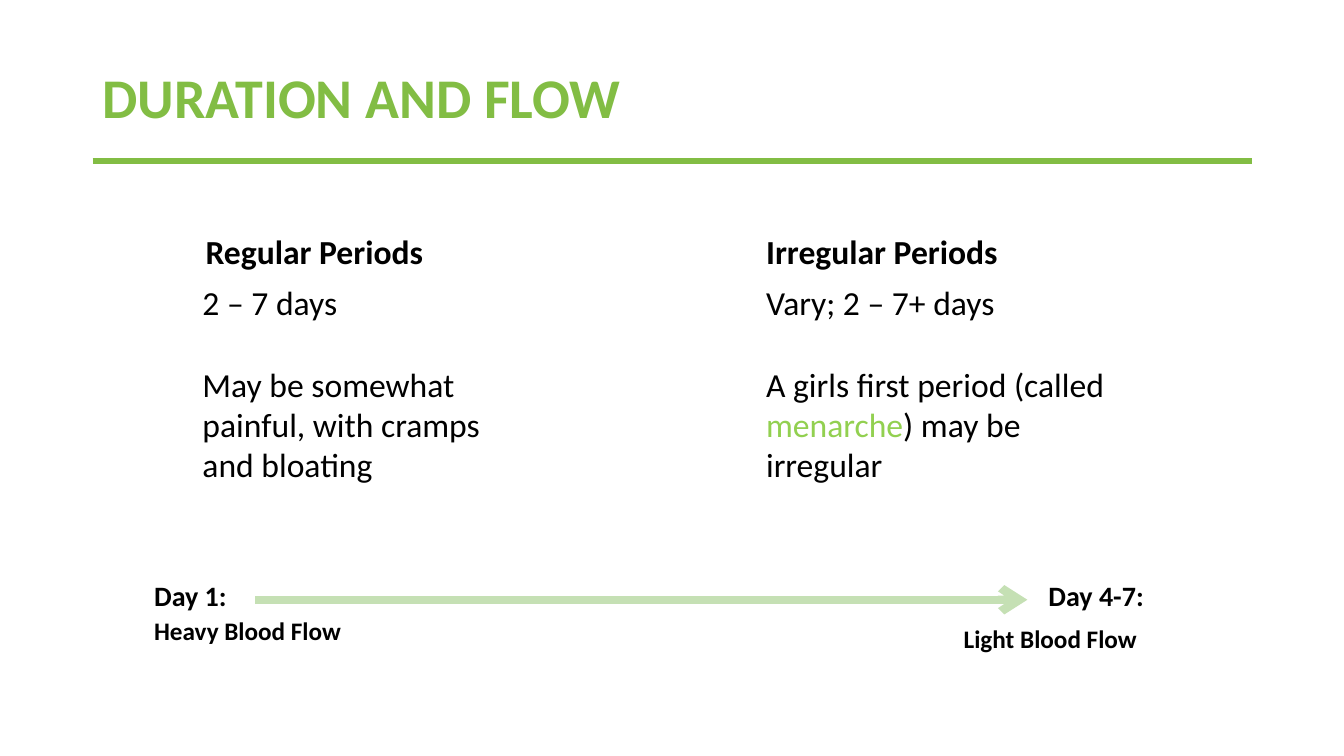
"""Build the slide comparing the duration and flow of periods."""
from lxml import etree
from pptx import Presentation
from pptx import util as u
from pptx.dml import color
from pptx.enum import shapes, text
from pptx.oxml import ns

COLORS = {"title": "82BD44", "accent": "92D050", "arrow": "C5E0B4", "body": "000000"}
FONTS = {
    "title": {"name": "Calibri", "size": u.Pt(40), "bold": True},
    "heading": {"name": "Calibri", "size": u.Pt(24), "bold": True},
    "body": {"name": "Calibri", "size": u.Pt(24), "bold": False},
    "day": {"name": "Calibri", "size": u.Pt(20), "bold": True},
    "flow": {"name": "Calibri", "size": u.Pt(18), "bold": True},
}
BLANK_LINE = u.Pt(29.3)


def add_text(slide, box, paragraphs, style, wrap=False, tint="body"):
    """Add a text box whose paragraphs are lists of (words, colour name) runs or plain strings."""
    shape = slide.shapes.add_textbox(*map(u.Inches, box))
    frame = shape.text_frame
    frame.word_wrap = wrap
    for index, runs in enumerate(paragraphs):
        paragraph = frame.paragraphs[0] if index == 0 else frame.add_paragraph()
        for words, name in [(runs, tint)] if isinstance(runs, str) else runs:
            run = paragraph.add_run()
            run.text = words
            for attribute, value in FONTS[style].items():
                setattr(run.font, attribute, value)
            run.font.color.rgb = color.RGBColor.from_string(COLORS[name])
    return frame


def add_line(slide, left, top, width, name, weight):
    """Add a horizontal line without a shadow and return it."""
    connector = slide.shapes.add_connector(
        shapes.MSO_CONNECTOR.STRAIGHT,
        u.Inches(left), u.Inches(top), u.Inches(left + width), u.Inches(top))
    connector.line.color.rgb = color.RGBColor.from_string(COLORS[name])
    connector.line.width = u.Pt(weight)
    etree.SubElement(connector._element.spPr, ns.qn("a:effectLst"))
    return connector


def add_title(slide, left, top, width, height):
    """Place the title with a rule along the bottom of the box."""
    frame = add_text(slide, (left, top, width / 2, height), ["DURATION AND FLOW"],
                     "title", wrap=True, tint="title")
    frame.vertical_anchor = text.MSO_ANCHOR.MIDDLE
    frame.paragraphs[0].line_spacing = 0.9
    add_line(slide, left, top + height, width, "title", 4.5)


def add_column(slide, left, top, width, height, heading, paragraphs, indent=0):
    """Place a heading above its body text, with a gap before the second paragraph."""
    heading_height = 0.51
    add_text(slide, (left + indent, top, 2.5, heading_height), [heading], "heading")
    frame = add_text(slide, (left, top + heading_height, width, height - heading_height),
                     paragraphs, "body", wrap=True)
    frame.paragraphs[1].space_before = BLANK_LINE


def add_timeline(slide, left, top, width, height):
    """Place the arrow from heavy to light flow with labels at both ends."""
    labels = [
        ("Day 1:", "day", 0, 0, 0.99),
        ("Day 4-7:", "day", width - 1.22, 0, 1.22),
        ("Heavy Blood Flow", "flow", 0, height - 0.47, 2.07),
        ("Light Blood Flow", "flow", width - 2.06, height - 0.4, 1.93),
    ]
    for words, style, across, down, label_width in labels:
        add_text(slide, (left + across, top + down, label_width, 0.4), [words], style)
    connector = add_line(slide, left + 1.1, top + 0.26, width - 2.43, "arrow", 6)
    etree.SubElement(connector.line._get_or_add_ln(), ns.qn("a:tailEnd"), type="arrow")


def main():
    """Create the slide and save the presentation."""
    presentation = Presentation()
    presentation.slide_width = u.Inches(13.33)
    presentation.slide_height = u.Inches(7.5)
    slide = presentation.slides.add_slide(presentation.slide_layouts[6])
    add_title(slide, 0.92, 0.4, 11.5, 1.2)
    add_column(slide, 1.91, 2.24, 3.54, 3.44, "Regular Periods",
               ["2 – 7 days", "May be somewhat painful, with cramps", "and bloating"],
               indent=0.03)
    add_column(slide, 7.5, 2.24, 3.8, 2.63, "Irregular Periods",
               ["Vary; 2 – 7+ days",
                [("A girls first period (called ", "body"), ("menarche", "accent"),
                 (") may be irregular", "body")]])
    add_timeline(slide, 1.43, 5.69, 10.09, 0.84)
    presentation.save("out.pptx")


if __name__ == "__main__":
    main()
